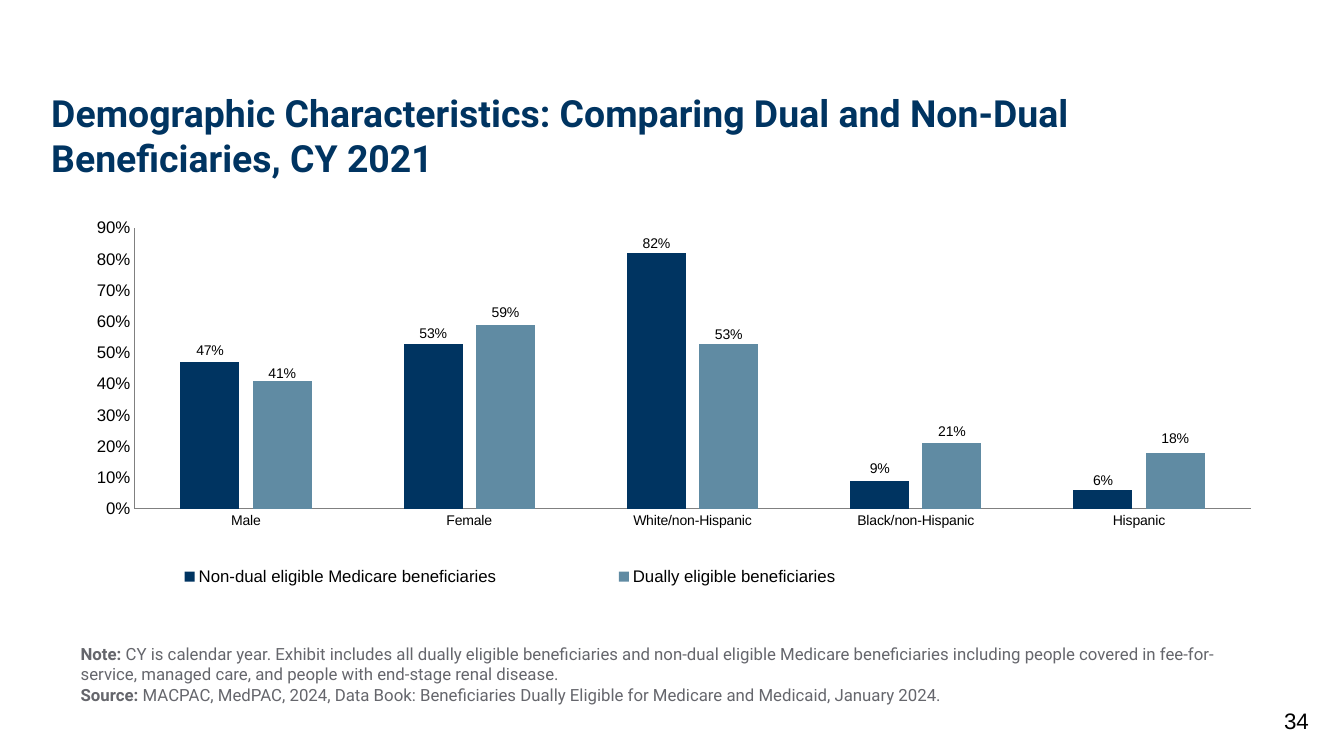
from lxml import etree
from pptx import Presentation
from pptx.chart.data import CategoryChartData
from pptx.dml.color import RGBColor
from pptx.enum.chart import XL_CHART_TYPE, XL_LABEL_POSITION, XL_LEGEND_POSITION, XL_TICK_MARK
from pptx.enum.text import MSO_ANCHOR, PP_ALIGN
from pptx.oxml.ns import qn
from pptx.util import Inches, Pt

COLORS = {"navy": "003461", "steel": "608BA3", "gray": "65666C", "axis": "808080", "black": "000000"}


def add_text(slide, box, paragraphs, size, font_name, color, align=PP_ALIGN.LEFT,
             anchor=MSO_ANCHOR.TOP, side_inset=0.1):
    """Add a text box; each paragraph is a list of (text, bold) runs."""
    shape = slide.shapes.add_textbox(*[Inches(length) for length in box])
    frame = shape.text_frame
    frame.word_wrap = True
    frame.vertical_anchor = anchor
    frame.margin_left = frame.margin_right = Inches(side_inset)
    for index, runs in enumerate(paragraphs):
        paragraph = frame.add_paragraph() if index else frame.paragraphs[0]
        paragraph.alignment = align
        for text, bold in runs:
            run = paragraph.add_run()
            run.text = text
            run.font.size = Pt(size)
            run.font.name = font_name
            run.font.bold = bold
            run.font.color.rgb = RGBColor.from_string(COLORS[color])


def add_layout(parent, position, **values):
    """Insert a manual chart layout at the given child position."""
    layout = etree.Element(qn("c:layout"))
    manual = etree.SubElement(layout, qn("c:manualLayout"))
    for name, value in values.items():
        etree.SubElement(manual, qn(f"c:{name}")).set("val", str(value))
    parent.insert(position, layout)


presentation = Presentation()
presentation.slide_width = Inches(13.33)
presentation.slide_height = Inches(7.5)
slide = presentation.slides.add_slide(presentation.slide_layouts[6])

# Chart data
chart_data = CategoryChartData(number_format="0%")
chart_data.categories = ["Male", "Female", "White/non-Hispanic", "Black/non-Hispanic", "Hispanic"]
chart_data.add_series("Non-dual eligible Medicare beneficiaries", [0.47, 0.53, 0.82, 0.09, 0.06])
chart_data.add_series("Dually eligible beneficiaries", [0.41, 0.59, 0.53, 0.21, 0.18])
chart = slide.shapes.add_chart(XL_CHART_TYPE.COLUMN_CLUSTERED, Inches(0.31), Inches(2.06),
                               Inches(12.18), Inches(4.36), chart_data).chart
chart.has_title = False
chart.font.name = "Arial"
chart.font.size = Pt(18)
chart.font.color.rgb = RGBColor.from_string(COLORS["black"])

# Plot area
plot = chart.plots[0]
plot.gap_width = 155
plot.overlap = -22
plot.vary_by_categories = False
plot_area = chart.element.chart.plotArea
for old_layout in plot_area.findall(qn("c:layout")):
    plot_area.remove(old_layout)
add_layout(plot_area, 0, layoutTarget="inner", xMode="edge", yMode="edge",
           x=0.084, y=0.047, w=0.909, h=0.639)

# Axes
for axis, size in ((chart.category_axis, 10), (chart.value_axis, 12)):
    axis.major_tick_mark = axis.minor_tick_mark = XL_TICK_MARK.NONE
    axis.has_major_gridlines = False
    axis.tick_labels.font.size = Pt(size)
    axis.tick_labels.font.name = "Arial"
    axis.format.line.color.rgb = RGBColor.from_string(COLORS["axis"])
    axis.format.line.width = Pt(0.75)
chart.value_axis.minimum_scale = 0
chart.value_axis.maximum_scale = 0.9
chart.value_axis.major_unit = 0.1
chart.value_axis.tick_labels.number_format = "0%"
chart.value_axis.tick_labels.number_format_is_linked = False

# Series colours and value labels, with downward nudges by point
label_nudges = [{1: 0.005, 2: 0.005, 4: 0.005}, {0: 0.01, 2: 0.007, 4: -0.005}]
for series, color, nudges in zip(plot.series, ("navy", "steel"), label_nudges):
    series.format.fill.solid()
    series.format.fill.fore_color.rgb = RGBColor.from_string(COLORS[color])
    labels = series.data_labels
    labels.show_value = True
    labels.number_format = "0%"
    labels.number_format_is_linked = False
    labels.position = XL_LABEL_POSITION.OUTSIDE_END
    labels.font.size = Pt(10)
    labels.font.name = "Arial"
    labels.font.color.rgb = RGBColor.from_string(COLORS["black"])
    for point_index, nudge in nudges.items():
        label = series.points[point_index].data_label
        label.position = XL_LABEL_POSITION.OUTSIDE_END
        label.font.size = Pt(10)
        label.font.name = "Arial"
        label_element = labels._element.find(f"{qn('c:dLbl')}[{qn('c:idx')}][last()]")
        add_layout(label_element, 1, x=0, y=nudge)

# Legend
chart.has_legend = True
legend = chart.legend
legend.position = XL_LEGEND_POSITION.BOTTOM
legend.include_in_layout = False
legend.font.size = Pt(12)
legend.font.name = "Arial"
for old_layout in legend._element.findall(qn("c:layout")):
    legend._element.remove(old_layout)
add_layout(legend._element, 1, xMode="edge", yMode="edge", x=0.03, y=0.79, w=0.72, h=0.1)

# Title
add_text(slide, (0.41, 0.85, 12, 0.84),
         [[("Demographic Characteristics: Comparing Dual and Non-Dual Beneficiaries, CY 2021", True)]],
         26.7, "Roboto", "navy")

# Note and source
add_text(slide, (0.67, 6.34, 12, 0.91), [
    [("Note:", True),
     (" CY is calendar year. Exhibit includes all dually eligible beneficiaries and non-dual eligible "
      "Medicare beneficiaries including people covered in fee-for-service, managed care, and people "
      "with end-stage renal disease.", False)],
    [("Source: ", True),
     ("MACPAC, MedPAC, 2024, Data Book: Beneficiaries Dually Eligible for Medicare and Medicaid, "
      "January 2024.", False)],
], 12, "Roboto", "gray", side_inset=0.13)

# Page number
add_text(slide, (9.97, 6.95, 3.11, 0.4), [[("34", False)]], 16, "Arial", "black",
         align=PP_ALIGN.RIGHT, anchor=MSO_ANCHOR.MIDDLE)

presentation.save("out.pptx")
